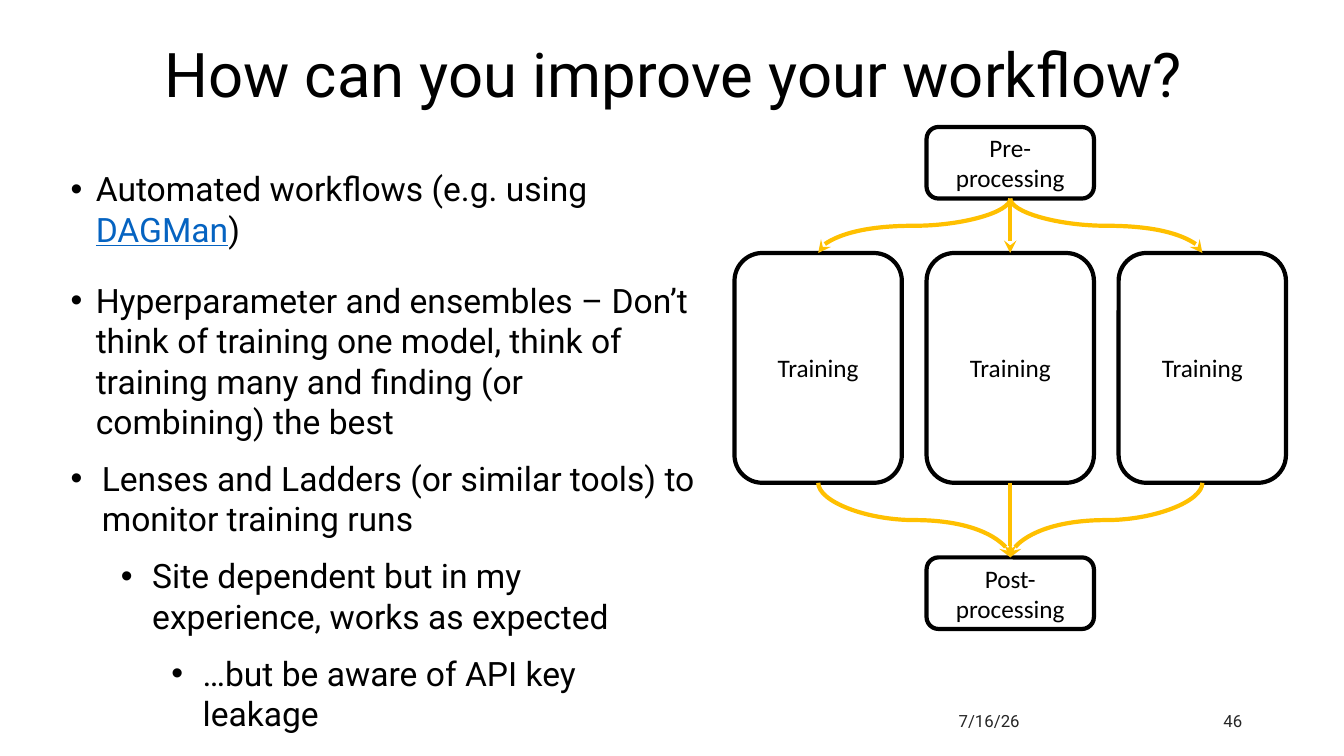
"""Build the slide on improving a training workflow."""
from lxml import etree
from pptx import Presentation
from pptx.dml.color import RGBColor
from pptx.enum import shapes, text
from pptx.oxml import ns
from pptx.util import Inches, Pt

COLORS = {"ink": "000000", "paper": "FFFFFF", "arrow": "FFC000",
          "link": "0563C1", "footer": "262626"}


def add_run(paragraph, wording, size, color, font="Roboto"):
    run = paragraph.add_run()
    run.text = wording
    run.font.size = Pt(size)
    run.font.name = font
    run.font.color.rgb = RGBColor.from_string(COLORS[color])
    return run


def style_arrow(arrow):
    arrow.line.color.rgb = RGBColor.from_string(COLORS["arrow"])
    arrow.line.width = Pt(3)
    properties = arrow._element.spPr
    outline = properties.find(ns.qn("a:ln"))
    etree.SubElement(outline, ns.qn("a:tailEnd"), type="stealth")
    etree.SubElement(properties, ns.qn("a:effectLst"))


deck = Presentation()
deck.slide_width = Inches(13.33)
deck.slide_height = Inches(7.5)
slide = deck.slides.add_slide(deck.slide_layouts[1])

heading = slide.shapes.title
heading.left, heading.top = Inches(1.53), Inches(0.04)
heading.width, heading.height = Inches(11.5), Inches(1.45)
heading.text_frame.auto_size = text.MSO_AUTO_SIZE.NONE
heading.text_frame.vertical_anchor = text.MSO_ANCHOR.MIDDLE
heading_line = heading.text_frame.paragraphs[0]
heading_line.alignment = text.PP_ALIGN.LEFT
heading_line.line_spacing = 0.9
add_run(heading_line, "How can you improve your workflow?", 44, "ink")

advice = slide.placeholders[1]
advice.left, advice.top = Inches(0.6), Inches(1.62)
advice.width, advice.height = Inches(6.43), Inches(5.76)
advice.text_frame.auto_size = text.MSO_AUTO_SIZE.NONE
advice.text_frame.vertical_anchor = text.MSO_ANCHOR.TOP

tips = [
    (0, 0.25, 0.25, 0, [("Automated workflows (e.g. using ", "ink"),
                        ("DAGMan", "link"), (")", "ink")]),
    (0, 0.25, 0.25, 10, [("Hyperparameter and ensembles – Don’t think of "
                          "training one model, think of training many and "
                          "finding (or combining) the best", "ink")]),
    (0, 0.31, 0.31, 0, [("Lenses and Ladders (or similar tools) to monitor "
                         "training runs", "ink")]),
    (1, 0.81, 0.31, 0, [("Site dependent but in my experience, works as "
                         "expected", "ink")]),
    (2, 1.31, 0.31, 0, [("…but be aware of API key leakage", "ink")]),
]
for index, (level, margin, hanging, before, pieces) in enumerate(tips):
    tip = (advice.text_frame.add_paragraph() if index
           else advice.text_frame.paragraphs[0])
    tip.level = level
    tip.alignment = text.PP_ALIGN.LEFT
    tip.space_before, tip.space_after = Pt(before), Pt(12)
    layout = tip._p.get_or_add_pPr()
    layout.set("marL", str(Inches(margin)))
    layout.set("indent", str(-Inches(hanging)))
    etree.SubElement(layout, ns.qn("a:buChar"), char="•")
    for wording, color in pieces:
        add_run(tip, wording, 24, color).font.underline = color == "link"

BOX_WIDTH, COLUMN_STEP, MIDDLE_LEFT = 1.66, 1.905, 9.19
MIDDLE = MIDDLE_LEFT + BOX_WIDTH / 2
stages = [("Pre-processing", 0, 1.26, 0.71)]
stages += [("Training", column, 2.51, 2.28) for column in (0, -1, 1)]
stages += [("Post-processing", 0, 5.53, 0.71)]
boxes = []
for label, column, top, height in stages:
    box = slide.shapes.add_shape(
        shapes.MSO_SHAPE.ROUNDED_RECTANGLE,
        Inches(MIDDLE_LEFT + column * COLUMN_STEP), Inches(top),
        Inches(BOX_WIDTH), Inches(height))
    box.shadow.inherit = False
    box.fill.solid()
    box.fill.fore_color.rgb = RGBColor.from_string(COLORS["paper"])
    box.line.color.rgb = RGBColor.from_string(COLORS["ink"])
    box.line.width = Pt(3)
    box.text_frame.word_wrap = True
    box.text_frame.vertical_anchor = text.MSO_ANCHOR.MIDDLE
    box_line = box.text_frame.paragraphs[0]
    box_line.alignment = text.PP_ALIGN.CENTER
    add_run(box_line, label, 18, "ink", "Calibri")
    boxes.append(box)

preprocessing, middle_training, _, _, postprocessing = boxes
for source, target in [(preprocessing, middle_training),
                       (middle_training, postprocessing)]:
    straight = slide.shapes.add_connector(
        shapes.MSO_CONNECTOR.STRAIGHT, 0, 0, 0, 0)
    straight.begin_connect(source, 2)
    straight.end_connect(target, 0)
    style_arrow(straight)

for side in (-1, 1):
    for top, bottom, heads_right in [(1.97, 2.51, side > 0),
                                     (4.79, 5.53, side < 0)]:
        center_x = MIDDLE + side * COLUMN_STEP / 2
        center_y = (top + bottom) / 2
        reach = (bottom - top) / 2 * (-1 if heads_right else 1)
        curve = slide.shapes.add_connector(
            shapes.MSO_CONNECTOR.CURVE,
            Inches(center_x - reach), Inches(center_y - COLUMN_STEP / 2),
            Inches(center_x + reach), Inches(center_y + COLUMN_STEP / 2))
        turn = 270 if heads_right else 90
        curve._element.spPr.find(ns.qn("a:xfrm")).set("rot", str(turn * 60000))
        style_arrow(curve)

for wording, left, alignment in [("7/16/26", 9.41, text.PP_ALIGN.LEFT),
                                 ("46", 10.92, text.PP_ALIGN.RIGHT)]:
    footer = slide.shapes.add_textbox(
        Inches(left), Inches(6.95), Inches(1.5), Inches(0.4))
    footer.text_frame.word_wrap = True
    footer.text_frame.vertical_anchor = text.MSO_ANCHOR.MIDDLE
    footer_line = footer.text_frame.paragraphs[0]
    footer_line.alignment = alignment
    add_run(footer_line, wording, 12, "footer")

deck.save("out.pptx")
